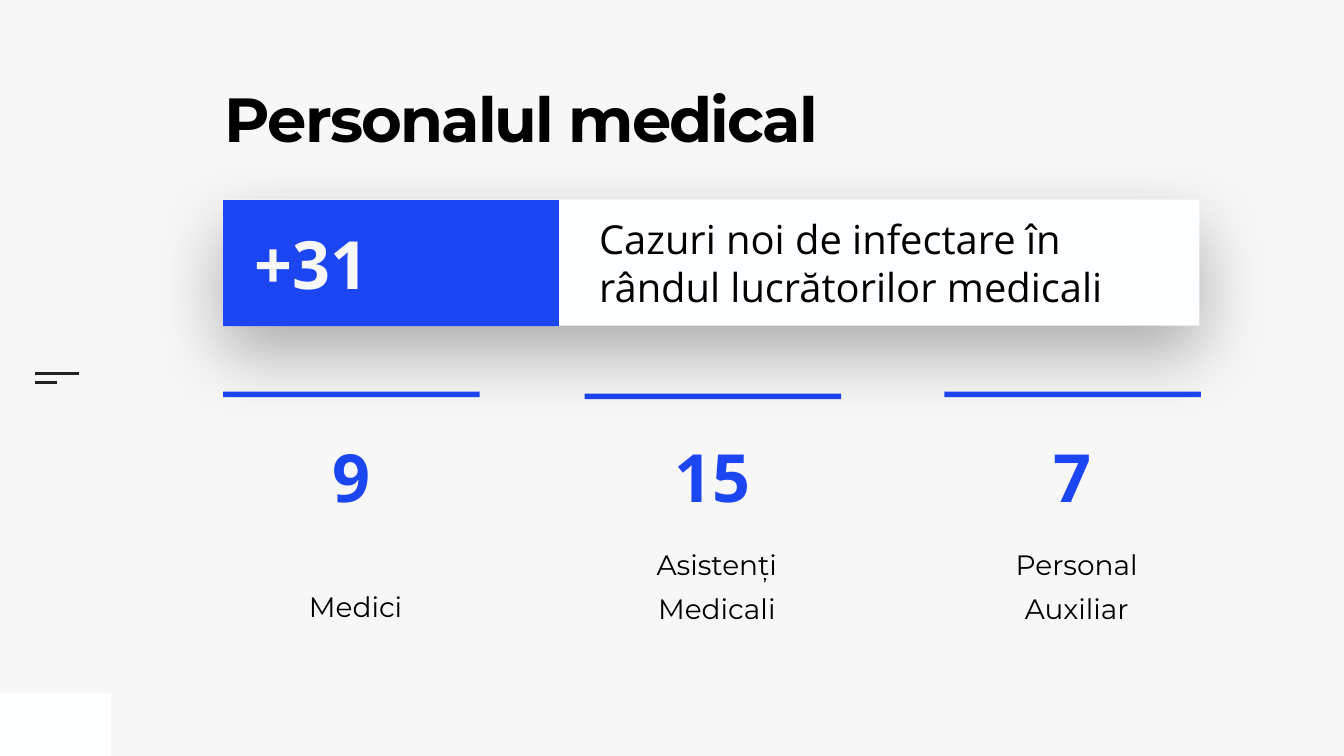
from lxml import etree
from pptx import Presentation
from pptx.dml.color import RGBColor
from pptx.enum.shapes import MSO_CONNECTOR, MSO_SHAPE
from pptx.enum.text import MSO_ANCHOR, PP_ALIGN
from pptx.oxml.ns import qn
from pptx.util import Inches, Pt

COLORS = {
    "background": "F7F7F7",
    "white": "FEFFFF",
    "blue": "1D46F3",
    "black": "000000",
    "mark": "222222",
}

TITLE = "Personalul medical"
TOTAL = "+31"
TOTAL_LABEL = "Cazuri noi de infectare în rândul lucrătorilor medicali"
# value, label, left, card top, bar top
GROUPS = [
    ("9", "Medici", 4.43, 7.77, 7.77),
    ("15", "Asistenți Medicali", 11.6, 7.81, 7.81),
    ("7", "Personal Auxiliar", 18.74, 7.81, 7.77),
]
MENU_LINES = [(7.41, 0.88), (7.59, 0.44)]  # y, length

CARD_WIDTH, CARD_HEIGHT, BAR_HEIGHT = 5.09, 5.46, 0.11
NUMBER_TOP, NUMBER_HEIGHT = 8.54, 1.8
CARD_INSETS = (0.55, 0.71, 0.39, 0.87)


def rgb(name):
    return RGBColor.from_string(COLORS[name])


def add_rectangle(slide, box, fill):
    shape = slide.shapes.add_shape(MSO_SHAPE.RECTANGLE, *map(Inches, box))
    shape.shadow.inherit = False
    shape.fill.solid()
    shape.fill.fore_color.rgb = rgb(fill)
    shape.line.fill.background()
    return shape


def write(shape, text, size, color="black", font="Open Sans", bold=False,
          align=PP_ALIGN.LEFT, anchor=MSO_ANCHOR.MIDDLE,
          insets=(0.1, 0.1, 0.1, 0.1), line_spacing=None, space_before=None,
          tracking=None):
    frame = shape.text_frame
    frame.word_wrap = True
    frame.vertical_anchor = anchor
    (frame.margin_left, frame.margin_top,
     frame.margin_right, frame.margin_bottom) = map(Inches, insets)
    paragraph = frame.paragraphs[0]
    paragraph.alignment = align
    paragraph.line_spacing = line_spacing
    if space_before is not None:
        paragraph.space_before = Pt(space_before)
    run = paragraph.add_run()
    run.text = text
    run.font.name = font
    run.font.size = Pt(size)
    run.font.bold = bold
    run.font.color.rgb = rgb(color)
    if tracking is not None:
        run.font._element.set("spc", str(round(tracking * 100)))


def add_text(slide, box, text, size, **style):
    write(slide.shapes.add_textbox(*map(Inches, box)), text, size, **style)


def add_shadow(shape, blur, distance, opacity):
    """Give the shape a soft shadow that falls straight down."""
    effects = shape._element.spPr.find(qn("a:effectLst"))
    shadow = etree.SubElement(
        effects, qn("a:outerShdw"), blurRad=str(Pt(blur)),
        dist=str(Pt(distance)), dir=str(90 * 60000), rotWithShape="0")
    color = etree.SubElement(shadow, qn("a:srgbClr"), val=COLORS["black"])
    etree.SubElement(color, qn("a:alpha"), val=str(opacity * 1000))


def add_menu_mark(slide):
    left = 0.69
    for y, length in MENU_LINES:
        line = slide.shapes.add_connector(
            MSO_CONNECTOR.STRAIGHT,
            *map(Inches, (left, y, left + length, y)))
        line.line.color.rgb = rgb("mark")
        line.line.width = Pt(3)
        etree.SubElement(line._element.spPr, qn("a:effectLst"))


def add_cards(slide):
    for _, label, left, card_top, bar_top in GROUPS:
        card = add_rectangle(
            slide, (left, card_top, CARD_WIDTH, CARD_HEIGHT), "background")
        write(card, label, 40, font="Montserrat", align=PP_ALIGN.CENTER,
              anchor=MSO_ANCHOR.BOTTOM, insets=CARD_INSETS,
              line_spacing=1.3, space_before=20)
        add_rectangle(slide, (left, bar_top, CARD_WIDTH, BAR_HEIGHT), "blue")


def add_banner(slide):
    panel = add_rectangle(slide, (4.43, 3.96, 19.37, 2.5), "white")
    add_shadow(panel, blur=100, distance=40, opacity=30)
    add_text(slide, (11.79, 4.15, 11.76, 2.12), TOTAL_LABEL, 57)
    add_rectangle(slide, (4.43, 3.97, 6.66, 2.5), "blue")
    add_text(slide, (4.96, 4.31, 6.03, 1.8), TOTAL, 95,
             color="background", bold=True)


def add_numbers(slide):
    for value, _, left, _, _ in GROUPS:
        add_text(slide, (left, NUMBER_TOP, CARD_WIDTH, NUMBER_HEIGHT), value,
                 95, color="blue", bold=True, align=PP_ALIGN.CENTER)


def main():
    presentation = Presentation()
    presentation.slide_width = Inches(26.67)
    presentation.slide_height = Inches(15)
    slide = presentation.slides.add_slide(presentation.slide_layouts[6])
    slide.background.fill.solid()
    slide.background.fill.fore_color.rgb = rgb("background")

    add_rectangle(slide, (0, 13.76, 2.2, 1.24), "white")
    add_menu_mark(slide)
    add_cards(slide)
    add_text(slide, (4.46, 1.87, 13.01, 2.73), TITLE, 89, font="Montserrat",
             bold=True, anchor=MSO_ANCHOR.TOP, insets=(0, 0, 0, 0),
             line_spacing=0.8, tracking=-2.7)
    add_banner(slide)
    add_numbers(slide)
    presentation.save("out.pptx")


if __name__ == "__main__":
    main()
